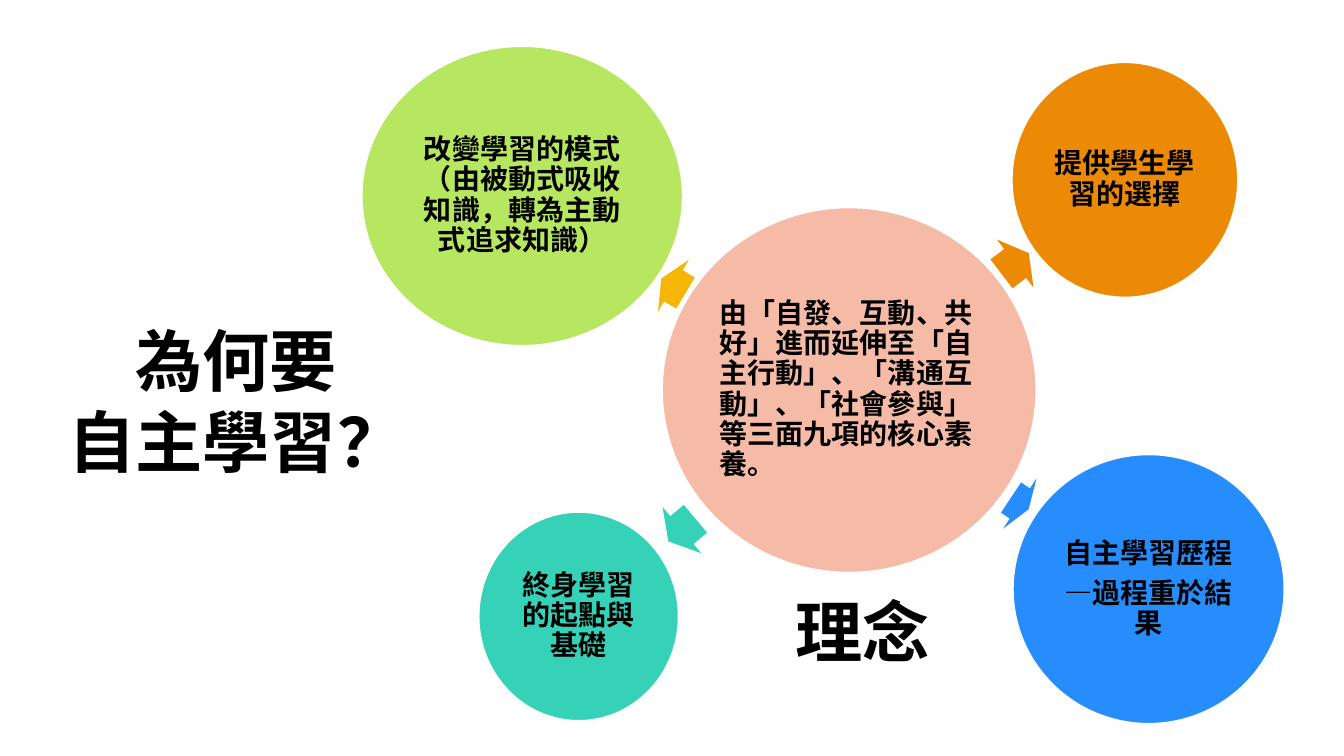
from math import atan2, cos, degrees, hypot, sin
from pptx import Presentation
from pptx.dml.color import RGBColor
from pptx.enum.shapes import MSO_SHAPE
from pptx.enum.text import MSO_ANCHOR, MSO_AUTO_SIZE, PP_ALIGN
from pptx.util import Pt

OVAL, ARROW = MSO_SHAPE.OVAL, MSO_SHAPE.RIGHT_ARROW
LEFT, CENTER = PP_ALIGN.LEFT, PP_ALIGN.CENTER
TOP, MIDDLE = MSO_ANCHOR.TOP, MSO_ANCHOR.MIDDLE
BLACK = RGBColor(0x00, 0x00, 0x00)
WHITE = RGBColor(0xFF, 0xFF, 0xFF)
PINK = RGBColor(0xF5, 0xBB, 0xA7)
ORANGE = RGBColor(0xED, 0x8A, 0x05)
BLUE = RGBColor(0x28, 0x8D, 0xFC)
TEAL = RGBColor(0x36, 0xD2, 0xB8)
LIME = RGBColor(0xB7, 0xE7, 0x61)
GOLD = RGBColor(0xF5, 0xB6, 0x05)
HEAD, BODY = "Noto Sans CJK JP", "Calibri"

TITLE = ["為何要", "自主學習？"]
LABEL = ["理念"]
CORE = ["由「自發、互動、共好」進而延伸至「自主行動」、「溝通互動」、「社會參與」等三面九項的核心素養。"]
HUB = (473, 148.3, 267.1, 260.6)
# lines, (left, top, width, height), circle colour, arrow colour, arrow length
IDEAS = [
    (["提供學生學習的選擇"], (722.9, 44.6, 161.3, 167.8), ORANGE, ORANGE, 24.5),
    (["自主學習歷程", "—過程重於結果"], (723.6, 324.7, 193.7, 192.2), BLUE, BLUE, 15.1),
    (["終身學習的起點與基礎"], (342, 365.8, 142.6, 149), TEAL, TEAL, 25.2),
    (["改變學習的模式（由被動式吸收知識，轉為主動式追求知識）"],
     (258.5, 33.1, 229, 213.8), LIME, GOLD, 20.2),
]
ARROW_WIDE = 43.2


def write(frame, lines, font, size, align, anchor):
    frame.auto_size = MSO_AUTO_SIZE.NONE
    frame.vertical_anchor = anchor
    frame.text = "\n".join(lines)
    for para in frame.paragraphs:
        para.alignment = align
        para.font.name = font
        para.font.size = Pt(size)
        para.font.bold = True
        para.font.color.rgb = BLACK


def add_solid(kind, box, color):
    shape = slide.shapes.add_shape(kind, *map(Pt, box))
    shape.shadow.inherit = False
    shape.fill.solid()
    shape.fill.fore_color.rgb = color
    return shape


def add_circle(lines, box, color, align):
    oval = add_solid(OVAL, box, color)
    oval.line.color.rgb = WHITE
    oval.line.width = Pt(1)
    frame = oval.text_frame
    frame.word_wrap = True
    frame.margin_left = frame.margin_right = Pt(2)
    frame.margin_top = frame.margin_bottom = Pt(2)
    write(frame, lines, BODY, 20, align, MIDDLE)
    for para in frame.paragraphs:
        para.line_spacing = 0.9
        para.space_after = Pt(7)


def middle(box):
    left, top, wide, high = box
    return left + wide / 2, top + high / 2


def reach(box, angle):
    """Distance from the centre of an ellipse to its edge."""
    wide, high = box[2:]
    return 1 / hypot(2 * cos(angle) / wide, 2 * sin(angle) / high)


def add_arrow(box, color, length):
    """Point from the hub to a circle, halfway across the gap."""
    (x, y), (to_x, to_y) = middle(HUB), middle(box)
    angle = atan2(to_y - y, to_x - x)
    gap = hypot(to_x - x, to_y - y)
    mid = (gap + reach(HUB, angle) - reach(box, angle)) / 2
    left = x + mid * cos(angle) - length / 2
    top = y + mid * sin(angle) - ARROW_WIDE / 2
    arrow = add_solid(ARROW, (left, top, length, ARROW_WIDE), color)
    arrow.line.fill.background()
    arrow.adjustments[0] = 0.6
    arrow.adjustments[1] = 0.5
    arrow.rotation = degrees(angle) % 360


deck = Presentation()
deck.slide_width, deck.slide_height = Pt(960), Pt(540)
slide = deck.slides.add_slide(deck.slide_layouts[5])

title = slide.shapes.title
title.left, title.top, title.width, title.height = map(Pt, (31.7, 224.6, 274.3, 123.8))
write(title.text_frame, TITLE, HEAD, 48, CENTER, TOP)

add_circle(CORE, HUB, PINK, LEFT)
for lines, box, color, tint, length in IDEAS:
    add_arrow(box, tint, length)
    add_circle(lines, box, color, CENTER)

label = slide.shapes.add_textbox(*map(Pt, (560.9, 418.3, 111.6, 65.5)))
label.text_frame.word_wrap = False
write(label.text_frame, LABEL, HEAD, 48, LEFT, TOP)

deck.save("out.pptx")
